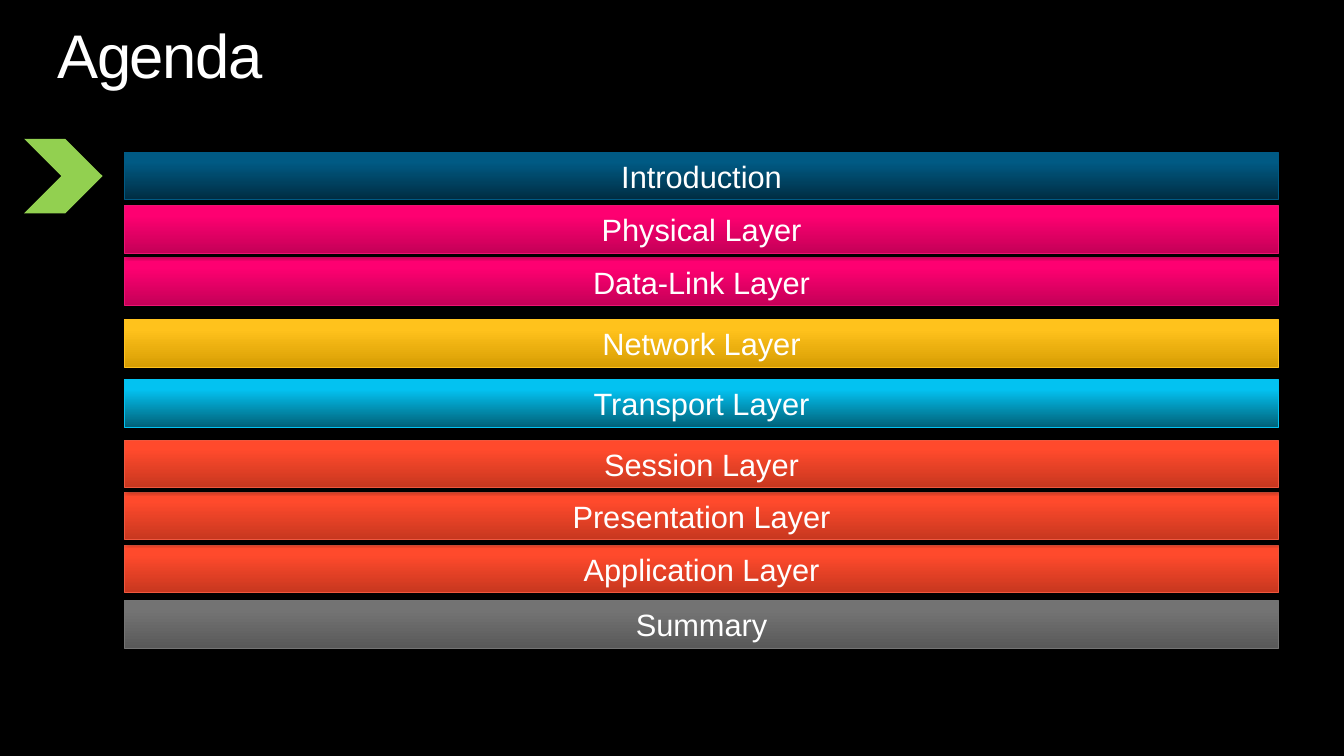
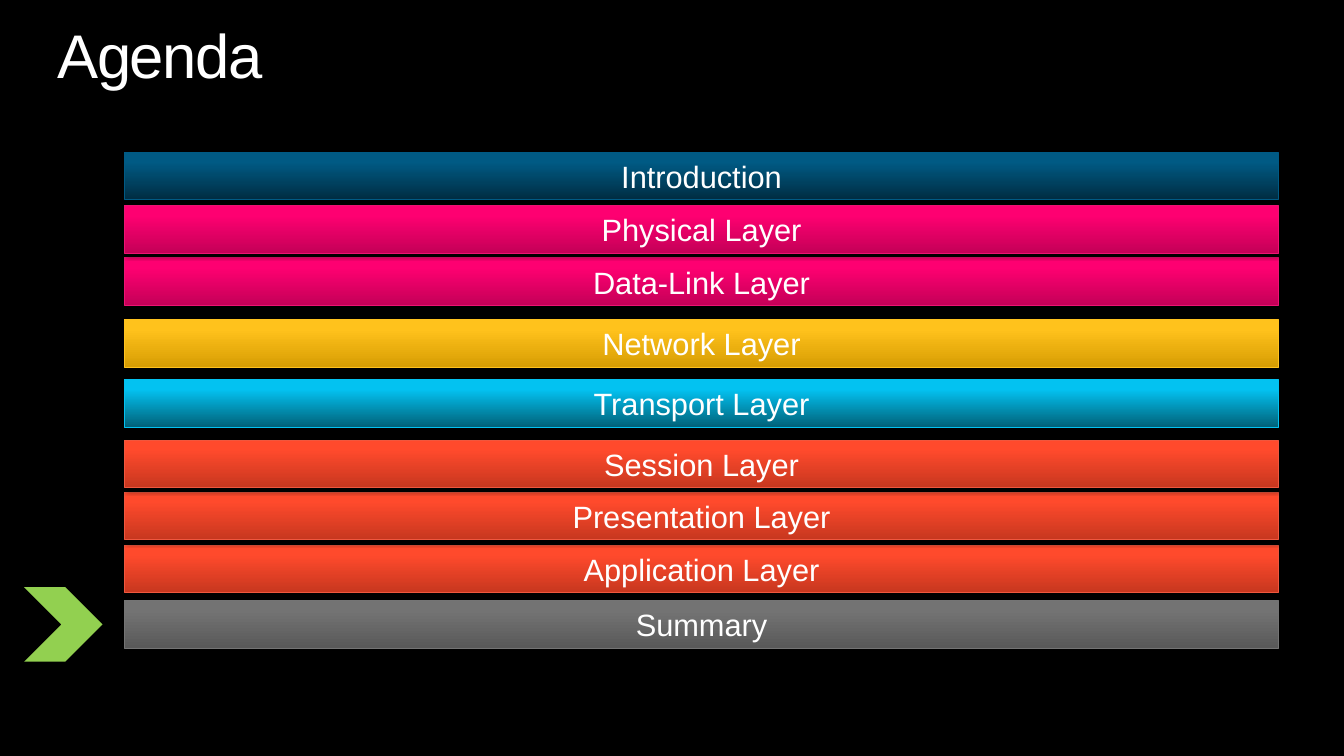
from pptx import Presentation
from pptx.dml.color import RGBColor
from pptx.enum import shapes, text
from pptx.oxml import parse_xml
from pptx.oxml.ns import nsdecls
from pptx.util import Pt

FACE = "Arial"
WHITE, BLACK, GREEN = "FFFFFF", "000000", "92D050"
BLUE = ("002D42", "005A84", "005A84")
CYAN = ("016178", "03C2F1", "03C2F1")
RED = ("C7371F", "FF4A2C", "F0573E")
GRAY = ("595959", "737373", "747474")
GOLD = ("D79D03", "FFC21C", "FFC21F")
PINK = ("C40057", "FE0071", "ED1374")

BARS = [
    ("Introduction", 108.75, BLUE),
    ("Transport Layer", 271.25, CYAN),
    ("Application Layer", 389.5, RED),
    ("Presentation Layer", 351.5, RED),
    ("Session Layer", 314.5, RED),
    ("Summary", 429, GRAY),
    ("Network Layer", 228.25, GOLD),
    ("Data-Link Layer", 184.25, PINK),
    ("Physical Layer", 147, PINK),
]
TOPS = {name: top for name, top, tones in BARS}
LEFT, WIDTH, HIGH = 89.25, 823.75, 34
SHADOW = (
    f'<a:effectLst {nsdecls("a")}>'
    '<a:outerShdw blurRad="40000" dist="23000" dir="5400000" rotWithShape="0">'
    '<a:srgbClr val="000000"><a:alpha val="35000"/></a:srgbClr>'
    '</a:outerShdw></a:effectLst>'
)


def color(code):
    return RGBColor.from_string(code)


def style(para, size):
    para.font.size = Pt(size)
    para.font.name = FACE
    para.font.color.rgb = color(WHITE)


def block(slide, kind, left, top, width, high):
    shape = slide.shapes.add_shape(kind, Pt(left), Pt(top), Pt(width), Pt(high))
    shape.shadow.inherit = False
    props = shape._element.spPr
    props.remove(props.find("{*}effectLst"))
    props.append(parse_xml(SHADOW))
    return shape


def heading(slide, words, left, top, width, high):
    title = slide.shapes.title
    title.left, title.top = Pt(left), Pt(top)
    title.width, title.height = Pt(width), Pt(high)
    frame = title.text_frame
    frame.text = words
    frame.margin_left = frame.margin_right = 0
    frame.margin_top = frame.margin_bottom = 0
    frame.vertical_anchor = text.MSO_ANCHOR.TOP
    frame.word_wrap = True
    frame.auto_size = text.MSO_AUTO_SIZE.SHAPE_TO_FIT_TEXT
    para = frame.paragraphs[0]
    para.alignment = text.PP_ALIGN.LEFT
    para.line_spacing = 0.9
    style(para, 44)
    para.runs[0]._r.get_or_add_rPr().set("spc", "-100")


def bar(slide, name, tones, left, top, width, high):
    dark, light, edge = tones
    shape = block(slide, shapes.MSO_SHAPE.ROUNDED_RECTANGLE, left, top, width, high)
    shape.adjustments[0] = 0
    shape.fill.gradient()
    shape.fill.gradient_angle = 90
    for stop, tone, place in zip(shape.fill.gradient_stops, (dark, light), (0, 0.8)):
        stop.color.rgb = color(tone)
        stop.position = place
    shape.line.color.rgb = color(edge)
    shape.line.width = Pt(0.75)
    frame = shape.text_frame
    frame.text = name
    frame.word_wrap = True
    frame.vertical_anchor = text.MSO_ANCHOR.MIDDLE
    para = frame.paragraphs[0]
    para.alignment = text.PP_ALIGN.CENTER
    style(para, 22)


def marker(slide, left, middle, width, high):
    shape = block(slide, shapes.MSO_SHAPE.CHEVRON, left, middle - high / 2, width, high)
    shape.fill.solid()
    shape.fill.fore_color.rgb = color(GREEN)
    shape.line.fill.background()


def agenda(deck, current):
    slide = deck.slides.add_slide(deck.slide_layouts.get_by_name("Title Only"))
    heading(slide, "Agenda", 41, 18, 878, 48)
    marker(slide, 17.25, TOPS[current] + HIGH / 2, 56, 53.25)
    for name, top, tones in BARS:
        bar(slide, name, tones, LEFT, top, WIDTH, HIGH)


def main():
    deck = Presentation()
    deck.slide_width, deck.slide_height = Pt(960), Pt(540)
    back = deck.slide_master.background.fill
    back.solid()
    back.fore_color.rgb = color(BLACK)
    for current in ("Introduction", "Summary"):
        agenda(deck, current)
    deck.save("out.pptx")


if __name__ == "__main__":
    main()
